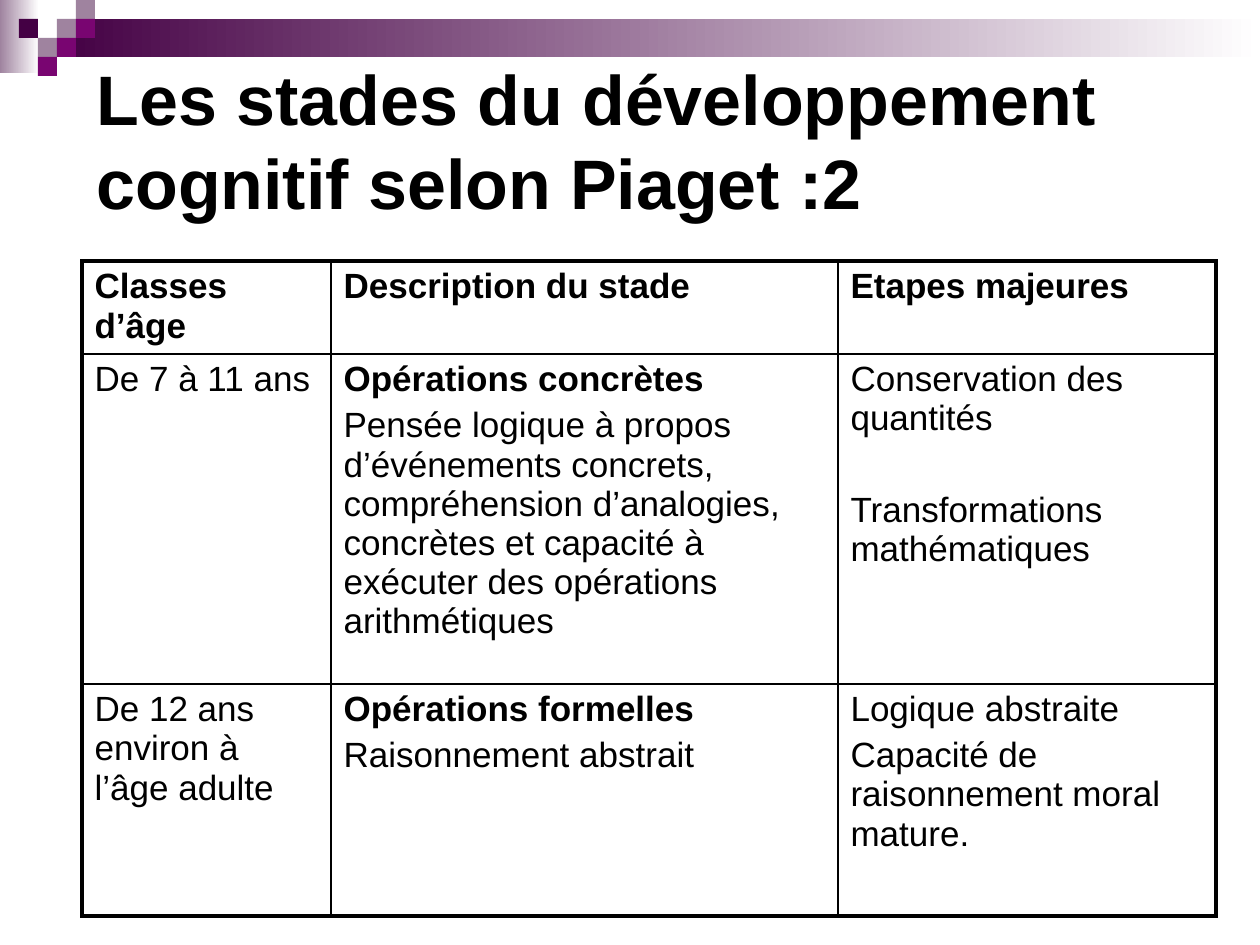
"""Build the slide on Piaget's stages of cognitive development."""
from dataclasses import dataclass

import lxml.etree
import pptx
import pptx.dml.color
import pptx.enum.shapes
import pptx.enum.text
import pptx.oxml.ns
import pptx.util

EMU_PER_PX = 914400 / 126
FONT = "Arial"
BLACK = pptx.dml.color.RGBColor(0x00, 0x00, 0x00)
WHITE = pptx.dml.color.RGBColor(0xFF, 0xFF, 0xFF)
MAUVE = pptx.dml.color.RGBColor(0x9F, 0x83, 0x9F)
PLUM = pptx.dml.color.RGBColor(0x44, 0x00, 0x44)
MAGENTA = pptx.dml.color.RGBColor(0x79, 0x05, 0x71)
TILE = 19
OUTER_LINE = 2.25
INNER_LINE = 1


@dataclass(frozen=True)
class Box:
    left: int
    top: int
    width: int
    height: int

    def emu(self) -> list[int]:
        return [px(n) for n in (self.left, self.top, self.width, self.height)]


@dataclass(frozen=True)
class Tile:
    column: int
    row: int
    color: pptx.dml.color.RGBColor


@dataclass(frozen=True)
class Line:
    text: str
    bold: bool = False
    space_before: int = 4


BANDS = [(Box(0, 0, 39, 73), MAUVE), (Box(57, 19, 1203, 38), PLUM)]
TILES = [
    Tile(3, 1, MAUVE),
    Tile(4, 0, MAUVE),
    Tile(4, 1, MAGENTA),
    Tile(2, 2, MAUVE),
    Tile(1, 1, PLUM),
    Tile(3, 2, MAGENTA),
    Tile(2, 3, MAGENTA),
]
TITLE_BOX = Box(84, 45, 1134, 189)
TABLE_BOX = Box(82, 261, 1134, 655)
COLUMN_WIDTHS = [249, 507, 378]
ROW_HEIGHTS = [93, 330, 232]
STAGES = [
    [
        [Line("Classes d’âge", True)],
        [Line("Description du stade", True)],
        [Line("Etapes majeures", True)],
    ],
    [
        [Line("De 7 à 11 ans")],
        [
            Line("Opérations concrètes", True),
            Line("Pensée logique à propos d’événements concrets, compréhension "
                 "d’analogies, concrètes et capacité à exécuter des opérations "
                 "arithmétiques"),
        ],
        [
            Line("Conservation des quantités"),
            Line("Transformations mathématiques", space_before=30),
        ],
    ],
    [
        [Line("De 12 ans environ à l’âge adulte")],
        [Line("Opérations formelles", True), Line("Raisonnement abstrait")],
        [Line("Logique abstraite"), Line("Capacité de raisonnement moral mature.")],
    ],
]


def px(length: int) -> int:
    return round(length * EMU_PER_PX)


def style_runs(paragraph, size: int, bold: bool) -> None:
    for run in paragraph.runs:
        run.font.name = FONT
        run.font.size = pptx.util.Pt(size)
        run.font.bold = bold
        run.font.color.rgb = BLACK


def add_block(slide, box: Box):
    block = slide.shapes.add_shape(
        pptx.enum.shapes.MSO_SHAPE.RECTANGLE, *box.emu())
    block.shadow.inherit = False
    block.line.fill.background()
    return block


def add_band(slide, box: Box, color: pptx.dml.color.RGBColor) -> None:
    fill = add_block(slide, box).fill
    fill.gradient()
    fill.gradient_angle = 0
    for stop, stop_color in zip(fill.gradient_stops, (color, WHITE)):
        stop.color.rgb = stop_color


def add_tile(slide, tile: Tile) -> None:
    box = Box(tile.column * TILE, tile.row * TILE, TILE, TILE)
    fill = add_block(slide, box).fill
    fill.solid()
    fill.fore_color.rgb = tile.color


def set_borders(cell, outer_sides: dict[str, bool]) -> None:
    properties = cell._tc.get_or_add_tcPr()
    qn = pptx.oxml.ns.qn
    for side, is_outer in outer_sides.items():
        width = pptx.util.Pt(OUTER_LINE if is_outer else INNER_LINE)
        border = lxml.etree.SubElement(
            properties, qn(f"a:ln{side}"), w=str(int(width)))
        solid = lxml.etree.SubElement(border, qn("a:solidFill"))
        lxml.etree.SubElement(solid, qn("a:srgbClr"), val=str(BLACK))


def fill_cell(cell, lines: list[Line]) -> None:
    cell.fill.background()
    cell.text_frame.text = "\n".join(line.text for line in lines)
    for paragraph, line in zip(cell.text_frame.paragraphs, lines):
        paragraph.space_before = pptx.util.Pt(line.space_before)
        style_runs(paragraph, 20, line.bold)


def add_stage_table(slide) -> None:
    last_row, last_column = len(ROW_HEIGHTS) - 1, len(COLUMN_WIDTHS) - 1
    table = slide.shapes.add_table(
        len(ROW_HEIGHTS), len(COLUMN_WIDTHS), *TABLE_BOX.emu()).table
    table.first_row = False
    table.horz_banding = False
    for column, width in zip(table.columns, COLUMN_WIDTHS):
        column.width = px(width)
    for row, height in zip(table.rows, ROW_HEIGHTS):
        row.height = px(height)
    for r, stage in enumerate(STAGES):
        for c, lines in enumerate(stage):
            cell = table.cell(r, c)
            set_borders(cell, {"L": c == 0, "R": c == last_column,
                               "T": r == 0, "B": r == last_row})
            fill_cell(cell, lines)


def set_title(slide, text: str) -> None:
    title = slide.shapes.title
    title.left, title.top, title.width, title.height = TITLE_BOX.emu()
    frame = title.text_frame
    frame.text = text
    frame.word_wrap = True
    frame.auto_size = pptx.enum.text.MSO_AUTO_SIZE.NONE
    frame.vertical_anchor = pptx.enum.text.MSO_ANCHOR.MIDDLE
    frame.paragraphs[0].alignment = pptx.enum.text.PP_ALIGN.LEFT
    style_runs(frame.paragraphs[0], 40, True)


def main() -> None:
    deck = pptx.Presentation()
    deck.slide_width, deck.slide_height = px(1260), px(945)
    slide = deck.slides.add_slide(deck.slide_layouts[5])
    for box, color in BANDS:
        add_band(slide, box, color)
    for tile in TILES:
        add_tile(slide, tile)
    add_stage_table(slide)
    set_title(slide, "Les stades du développement cognitif selon Piaget :2")
    deck.save("out.pptx")


if __name__ == "__main__":
    main()
